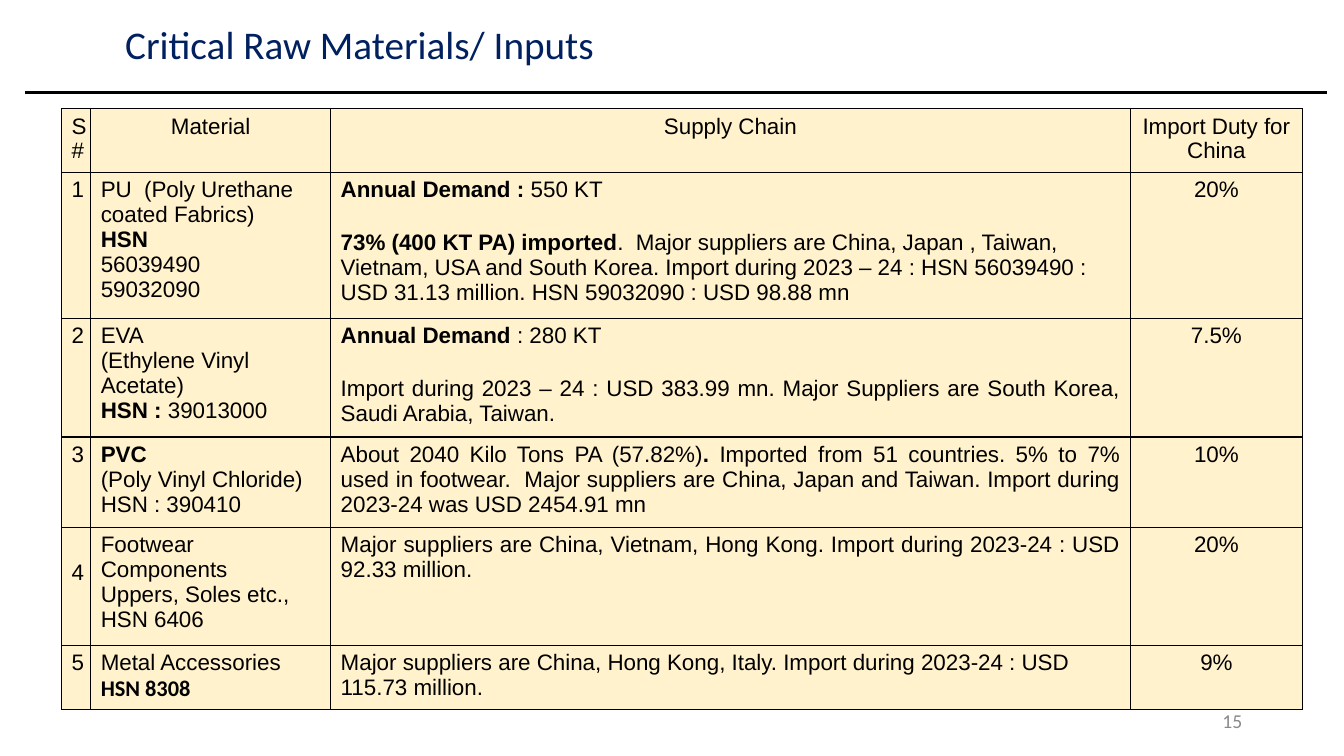
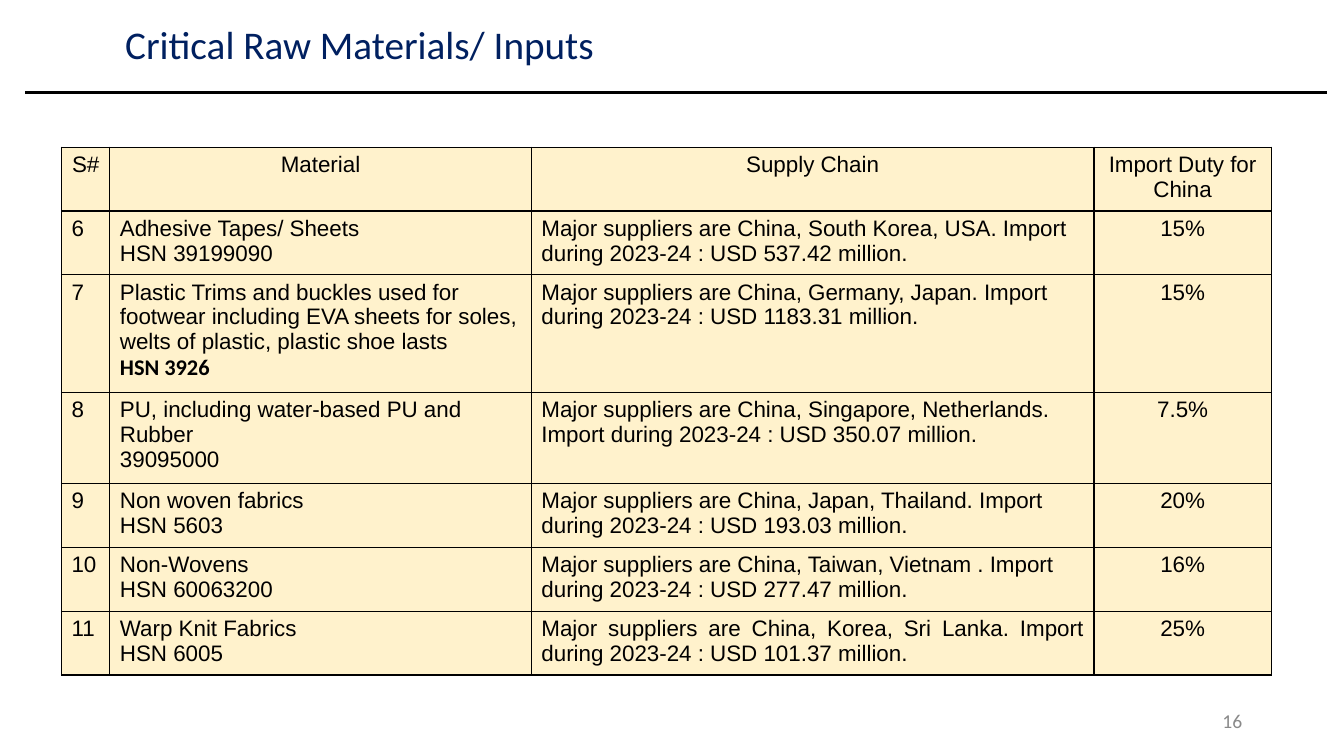
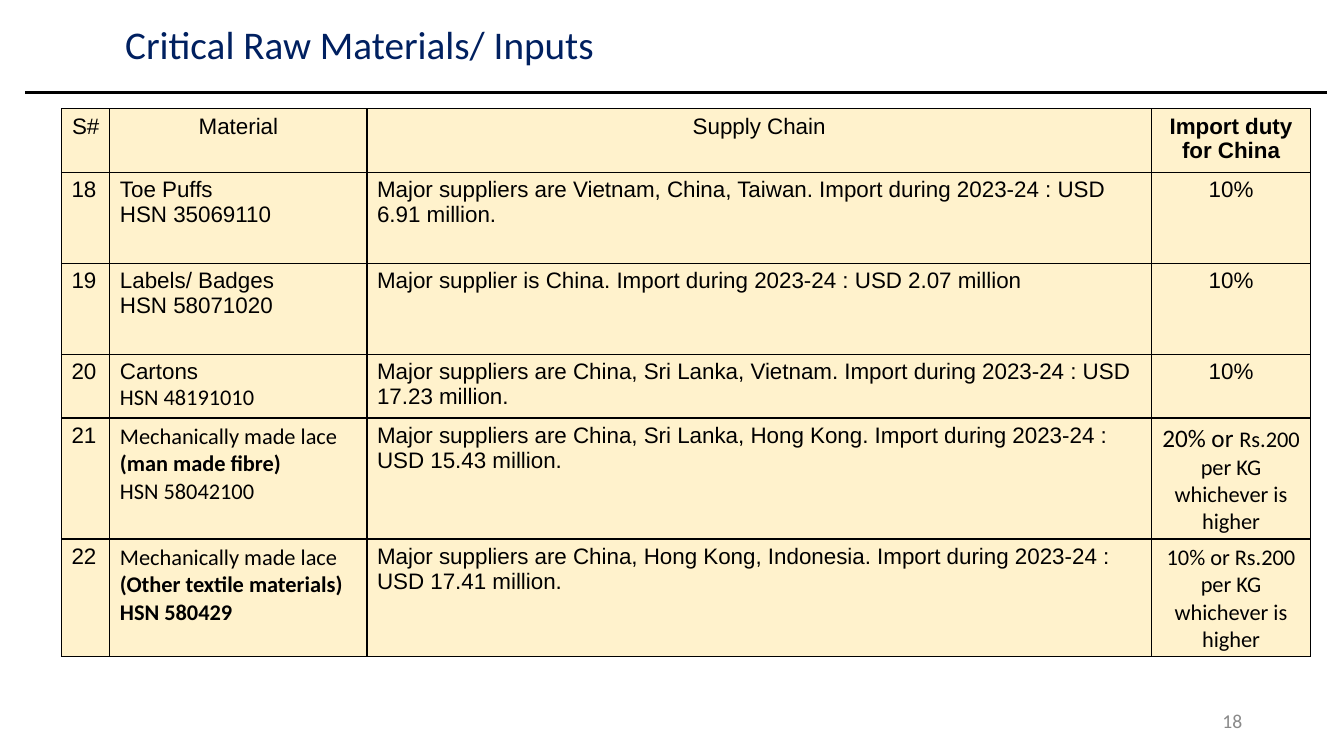
"""Three slides of tables on critical raw materials for footwear."""
from lxml import etree
from pptx import Presentation
from pptx.dml.color import RGBColor
from pptx.enum.shapes import MSO_CONNECTOR
from pptx.enum.text import MSO_ANCHOR, PP_ALIGN
from pptx.oxml.ns import qn
from pptx.util import Inches, Pt

LEFT, CENTER, RIGHT, JUSTIFY = PP_ALIGN.LEFT, PP_ALIGN.CENTER, PP_ALIGN.RIGHT, PP_ALIGN.JUSTIFY
MIDDLE = MSO_ANCHOR.MIDDLE
STRAIGHT = MSO_CONNECTOR.STRAIGHT

NAVY = RGBColor(0x00, 0x20, 0x60)
GREY = RGBColor(0x89, 0x89, 0x89)
BLACK = RGBColor(0x00, 0x00, 0x00)
CREAM = RGBColor(0xFF, 0xF2, 0xCC)

ARIAL_BOLD = {"bold": True}
CALIBRI = {"name": "Calibri"}
CALIBRI_BOLD = {"name": "Calibri", "bold": True}
CALIBRI_LARGE = {"name": "Calibri", "size": Pt(18)}

JUSTIFIED_ITEMS = {"2", "3", "4", "11", "19"}
LOWERED_ITEM = "4"

PAGES = [
    {
        "number": "15",
        "top": 1.08,
        "columns": [0.29, 2.38, 7.93, 1.71],
        "heights": [0.63, 1.43, 1.17, 0.9, 0.9, 0.63],
        "rows": [
            ["S#", "Material", "Supply Chain", "Import Duty for China"],
            ["1",
             ["PU  (Poly Urethane coated Fabrics)", ("HSN", ARIAL_BOLD), "56039490", "59032090"],
             [[("Annual Demand : ", ARIAL_BOLD), "550 KT"],
              [("73% (400 KT PA) imported", ARIAL_BOLD),
               ".  Major suppliers are China, Japan , Taiwan, Vietnam, USA and South Korea. "
               "Import during 2023 – 24 : HSN 56039490 : USD 31.13 million. "
               "HSN 59032090 : USD 98.88 mn"]],
             "20%"],
            ["2",
             ["EVA", "(Ethylene Vinyl Acetate)", [("HSN : ", ARIAL_BOLD), "39013000"]],
             [[("Annual Demand", ARIAL_BOLD), " : 280 KT"],
              "Import during 2023 – 24 : USD 383.99 mn. "
              "Major Suppliers are South Korea, Saudi Arabia, Taiwan."],
             "7.5%"],
            ["3",
             [("PVC", ARIAL_BOLD), "(Poly Vinyl Chloride)", "HSN : 390410"],
             [["About 2040 Kilo Tons PA (57.82%)", (". ", ARIAL_BOLD),
               "Imported from 51 countries. 5% to 7% used in footwear.  "
               "Major suppliers are China, Japan and Taiwan. "
               "Import during 2023-24 was USD 2454.91 mn"]],
             "10%"],
            ["4",
             ["Footwear Components", "Uppers, Soles etc.,", "HSN 6406"],
             "Major suppliers are China, Vietnam, Hong Kong. "
             "Import during 2023-24 : USD 92.33 million.",
             "20%"],
            ["5",
             ["Metal Accessories", ("HSN 8308", CALIBRI_BOLD)],
             "Major suppliers are China, Hong Kong, Italy. "
             "Import during 2023-24 : USD 115.73 million.",
             "9%"],
        ],
    },
    {
        "number": "16",
        "top": 1.46,
        "columns": [0.48, 4.18, 5.58, 1.76],
        "heights": [0.63, 0.63, 1.17, 0.63, 0.63, 0.63, 0.63],
        "rows": [
            ["S#", "Material", "Supply Chain", "Import Duty for China"],
            ["6",
             ["Adhesive Tapes/ Sheets", "HSN 39199090"],
             "Major suppliers are China, South Korea, USA. "
             "Import during 2023-24 : USD 537.42 million.",
             "15%"],
            ["7",
             ["Plastic Trims and buckles used for footwear including EVA sheets for soles, "
              "welts of plastic, plastic shoe lasts", ("HSN 3926", CALIBRI_BOLD)],
             "Major suppliers are China, Germany, Japan. "
             "Import during 2023-24 : USD 1183.31 million.",
             "15%"],
            ["8",
             ["PU, including water-based PU and Rubber", "39095000"],
             "Major suppliers are China, Singapore, Netherlands. "
             "Import during 2023-24 : USD 350.07 million.",
             "7.5%"],
            ["9",
             ["Non woven fabrics", "HSN 5603"],
             "Major suppliers are China, Japan, Thailand. "
             "Import during 2023-24 : USD 193.03 million.",
             "20%"],
            ["10",
             ["Non-Wovens", "HSN 60063200"],
             "Major suppliers are China, Taiwan, Vietnam . "
             "Import during 2023-24 : USD 277.47 million.",
             "16%"],
            ["11",
             ["Warp Knit Fabrics", "HSN 6005"],
             "Major suppliers are China, Korea, Sri Lanka. "
             "Import during 2023-24 : USD 101.37 million.",
             "25%"],
        ],
    },
    {
        "number": "18",
        "top": 1.08,
        "columns": [0.48, 2.55, 7.78, 1.58],
        "heights": [0.63, 0.9, 0.9, 0.63, 1.2, 1.17],
        "rows": [
            ["S#", "Material", "Supply Chain", [("Import duty for China", ARIAL_BOLD)]],
            ["18",
             ["Toe Puffs", "HSN 35069110"],
             "Major suppliers are Vietnam, China, Taiwan. "
             "Import during 2023-24 : USD 6.91 million.",
             "10%"],
            ["19",
             ["Labels/ Badges", "HSN 58071020"],
             "Major supplier is China. Import during 2023-24 : USD 2.07 million",
             "10%"],
            ["20",
             ["Cartons", ("HSN 48191010", CALIBRI)],
             "Major suppliers are China, Sri Lanka, Vietnam. "
             "Import during 2023-24 : USD 17.23 million.",
             "10%"],
            ["21",
             [[("Mechanically made lace ", CALIBRI), ("(man made fibre)", CALIBRI_BOLD)],
              ("HSN 58042100", CALIBRI)],
             "Major suppliers are China, Sri Lanka, Hong Kong. "
             "Import during 2023-24 : USD 15.43 million.",
             [[("20% or ", CALIBRI_LARGE), ("Rs.200 per KG whichever is higher", CALIBRI)]]],
            ["22",
             [[("Mechanically made lace ", CALIBRI), ("(Other textile materials)", CALIBRI_BOLD)],
              ("HSN 580429", CALIBRI_BOLD)],
             "Major suppliers are China, Hong Kong, Indonesia. "
             "Import during 2023-24 : USD 17.41 million.",
             [("10% or Rs.200 per KG whichever is higher", CALIBRI)]],
        ],
    },
]


def as_list(content):
    """Wrap a single item in a list."""
    return content if isinstance(content, list) else [content]


def add_label(slide, text, box, align, size, color):
    """Add one line of Calibri text, centred vertically in its box."""
    frame = slide.shapes.add_textbox(*[Inches(length) for length in box]).text_frame
    frame.word_wrap = True
    frame.vertical_anchor = MIDDLE
    paragraph = frame.paragraphs[0]
    paragraph.alignment = align
    run = paragraph.add_run()
    run.text = text
    run.font.name = "Calibri"
    run.font.size = Pt(size)
    run.font.color.rgb = color
    return paragraph


prs = Presentation()
prs.slide_width = Inches(13.33)
prs.slide_height = Inches(7.5)

for page in PAGES:
    slide = prs.slides.add_slide(prs.slide_layouts[6])
    add_label(slide, page["number"], (9.42, 6.95, 3, 0.4), RIGHT, 14, GREY)
    title = add_label(slide, "Critical Raw Materials/ Inputs", (-1.63, 0.2, 10.39, 0.53),
                      CENTER, 28, NAVY)
    title.line_spacing = 0.9

    title_rule = slide.shapes.add_connector(STRAIGHT, Inches(0.25), Inches(0.92),
                                            Inches(13.16), Inches(0.92))
    title_rule.line.color.rgb = BLACK
    title_rule.line.width = Pt(2.25)
    etree.SubElement(title_rule._element.spPr, qn("a:effectLst"))

    materials = slide.shapes.add_table(
        len(page["rows"]), len(page["columns"]), Inches(0.61), Inches(page["top"]),
        Inches(sum(page["columns"])), Inches(sum(page["heights"]))).table
    materials.first_row = False
    materials.horz_banding = False
    for column, width in zip(materials.columns, page["columns"]):
        column.width = Inches(width)

    for row_index, (row, height) in enumerate(zip(page["rows"], page["heights"])):
        materials.rows[row_index].height = Inches(height)
        item = row[0]
        for column_index, content in enumerate(row):
            cell = materials.cell(row_index, column_index)
            cell.margin_left = cell.margin_right = Inches(0.1)
            cell.margin_top = cell.margin_bottom = Inches(0.05)
            if column_index == 0 and item == LOWERED_ITEM:
                cell.margin_top = Inches(0.32)

            borders = cell._tc.get_or_add_tcPr()
            for side in ("lnL", "lnR", "lnT", "lnB"):
                border = etree.SubElement(borders, qn(f"a:{side}"), w=str(Pt(1)))
                ink = etree.SubElement(border, qn("a:solidFill"))
                etree.SubElement(ink, qn("a:srgbClr"), val=str(BLACK))
            cell.fill.solid()
            cell.fill.fore_color.rgb = CREAM

            if row_index == 0 or column_index == 3:
                align = CENTER
            elif column_index == 2 and item in JUSTIFIED_ITEMS:
                align = JUSTIFY
            else:
                align = LEFT

            lines = as_list(content)
            for line_index, line in enumerate(lines):
                frame = cell.text_frame
                paragraph = frame.add_paragraph() if line_index else frame.paragraphs[0]
                paragraph.alignment = align
                if column_index == 2 and line_index < len(lines) - 1:
                    paragraph.space_after = Pt(20)
                for piece in as_list(line):
                    text, style = piece if isinstance(piece, tuple) else (piece, {})
                    run = paragraph.add_run()
                    run.text = text
                    run.font.name = style.get("name", "Arial")
                    run.font.size = style.get("size", Pt(16))
                    run.font.bold = style.get("bold", False)
                    run.font.color.rgb = BLACK

prs.save("out.pptx")
